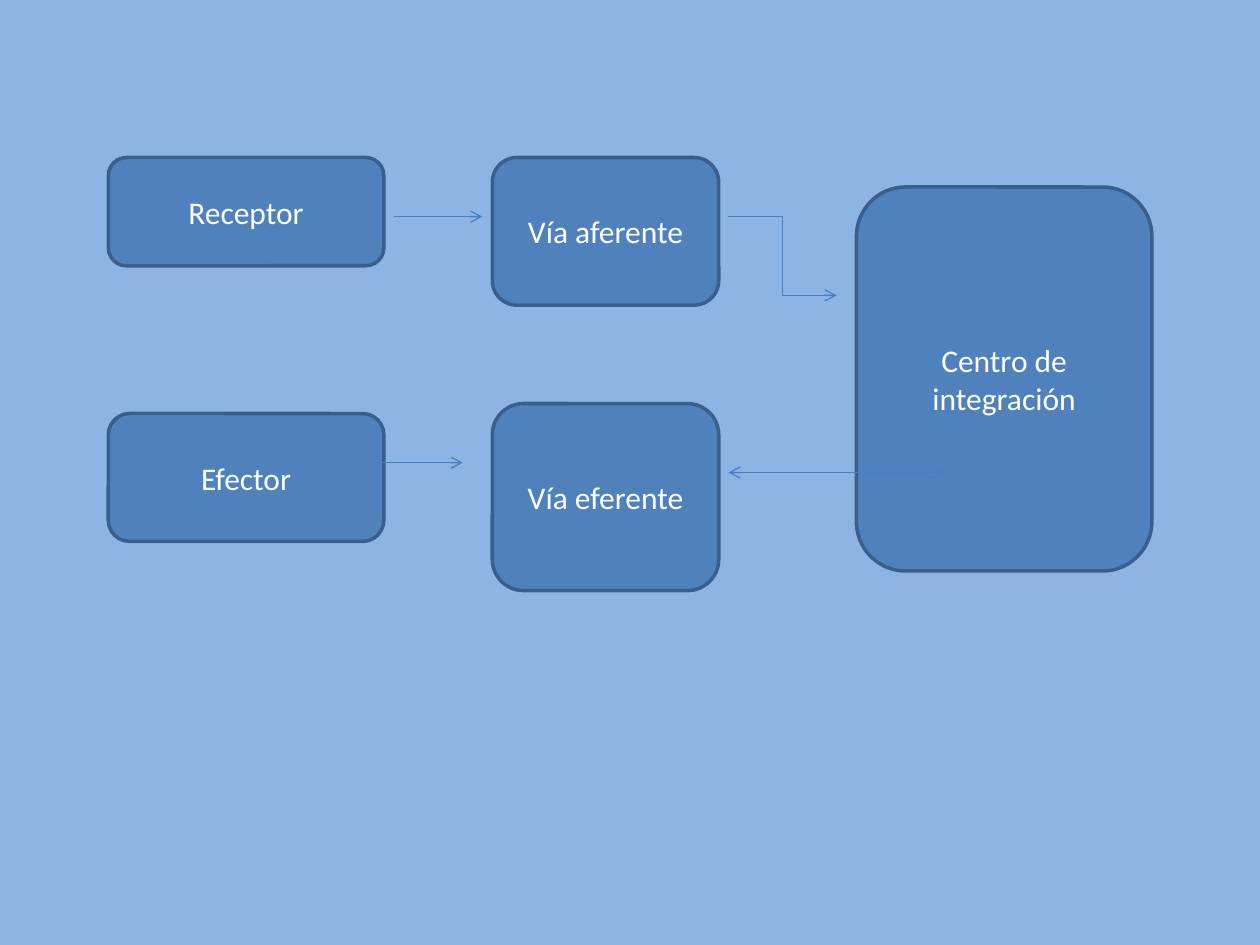
from lxml.etree import SubElement
from pptx import Presentation
from pptx.dml.color import RGBColor
from pptx.enum.shapes import MSO_CONNECTOR, MSO_SHAPE
from pptx.enum.text import MSO_ANCHOR, PP_ALIGN
from pptx.oxml.ns import qn
from pptx.util import Pt

SKY = RGBColor(0x8E, 0xB4, 0xE3)
BLUE = RGBColor(0x4F, 0x81, 0xBD)
DARK_BLUE = RGBColor(0x3A, 0x5F, 0x8C)
ARROW_BLUE = RGBColor(0x4B, 0x7E, 0xBC)
WHITE = RGBColor(0xFF, 0xFF, 0xFF)

LABEL_FONT = {"name": "Calibri", "size": Pt(18)}

# Columns of the reflex arc: left edge and width
ORGANS = (61.9, 157.5)
PATHWAYS = (281.3, 129.4)
CENTRE = (489.4, 168.8)

# Label, column, top, height
STAGES = [
    ("Receptor", ORGANS, 90, 61.9),
    ("Vía aferente", PATHWAYS, 90, 84.4),
    ("Centro de integración", CENTRE, 106.9, 219.4),
    ("Efector", ORGANS, 236.3, 73.1),
    ("Vía eferente", PATHWAYS, 230.6, 106.9),
]

# Kind, start, end, ends that carry an arrowhead
ARROWS = [
    (MSO_CONNECTOR.STRAIGHT, (225, 123.8), (275.6, 123.8), ["tailEnd"]),
    (MSO_CONNECTOR.ELBOW, (416.3, 123.8), (478.1, 168.8), ["tailEnd"]),
    (MSO_CONNECTOR.STRAIGHT, (213.8, 264.4), (264.4, 264.4), ["tailEnd"]),
    (MSO_CONNECTOR.STRAIGHT, (540, 270), (416.3, 270), ["headEnd", "tailEnd"]),
]


def add_stage(slide, label, column, top, height):
    left, width = column
    stage = slide.shapes.add_shape(
        MSO_SHAPE.ROUNDED_RECTANGLE, Pt(left), Pt(top), Pt(width), Pt(height))
    stage.shadow.inherit = False
    stage.fill.solid()
    stage.fill.fore_color.rgb = BLUE
    stage.line.color.rgb = DARK_BLUE
    stage.line.width = Pt(2)

    frame = stage.text_frame
    frame.word_wrap = True
    frame.vertical_anchor = MSO_ANCHOR.MIDDLE
    paragraph = frame.paragraphs[0]
    paragraph.alignment = PP_ALIGN.CENTER
    run = paragraph.add_run()
    run.text = label
    for attribute, value in LABEL_FONT.items():
        setattr(run.font, attribute, value)
    run.font.color.rgb = WHITE


def add_arrow(slide, kind, start, end, heads):
    arrow = slide.shapes.add_connector(kind, *map(Pt, start + end))
    arrow.line.color.rgb = ARROW_BLUE
    arrow.line.width = Pt(0.75)
    properties = arrow.element.spPr
    outline = properties.find(qn("a:ln"))
    for head in heads:
        SubElement(outline, qn(f"a:{head}"), type="arrow")
    SubElement(properties, qn("a:effectLst"))


def main():
    presentation = Presentation()
    presentation.slide_width, presentation.slide_height = Pt(720), Pt(540)
    slide = presentation.slides.add_slide(presentation.slide_layouts.get_by_name("Blank"))
    slide.background.fill.solid()
    slide.background.fill.fore_color.rgb = SKY
    for stage in STAGES:
        add_stage(slide, *stage)
    for arrow in ARROWS:
        add_arrow(slide, *arrow)
    presentation.save("out.pptx")


if __name__ == "__main__":
    main()
